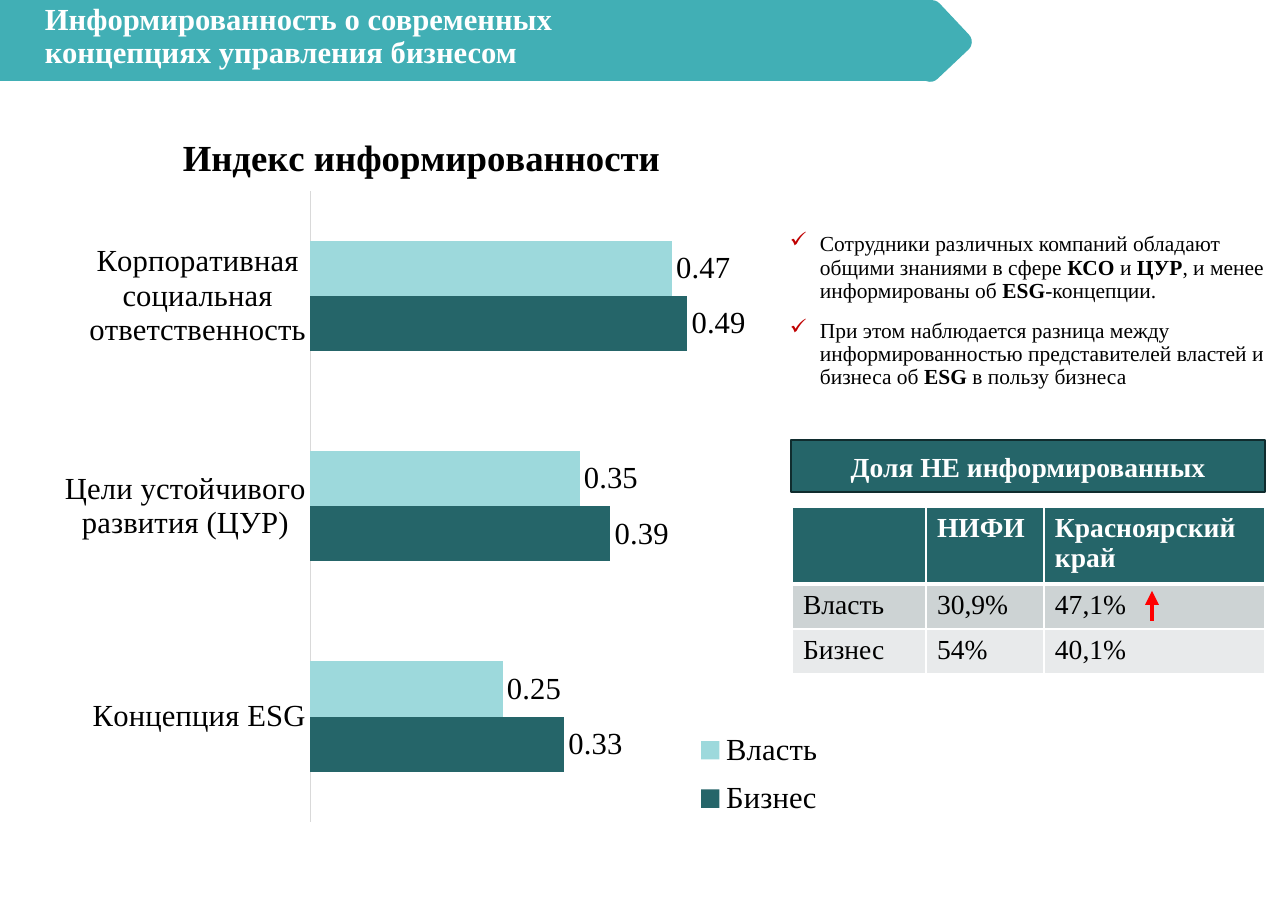
from lxml.etree import SubElement
from pptx import Presentation
from pptx.chart.data import CategoryChartData
from pptx.dml.color import RGBColor
from pptx.enum.chart import XL_CHART_TYPE as ChartType, XL_LABEL_POSITION as LabelPosition
from pptx.enum.chart import XL_LEGEND_POSITION as LegendPosition, XL_TICK_MARK as TickMark
from pptx.enum.shapes import MSO_CONNECTOR as Connector, MSO_SHAPE as Shape
from pptx.enum.text import MSO_ANCHOR as Anchor, PP_ALIGN as Align
from pptx.oxml import parse_xml
from pptx.oxml.ns import nsdecls, qn
from pptx.util import Pt

PX = 8298  # EMU in one px
FONT = "Times New Roman"
COLORS = {"band": "41AFB5", "dark": "256569", "light": "9DD9DC", "edge": "102C2E",
          "row1": "CDD3D4", "row2": "E8EAEB", "axis": "D9D9D9", "check": "C00000",
          "arrow": "FF0000", "white": "FFFFFF", "black": "000000"}


def rgb(name):
    return RGBColor.from_string(COLORS[name])


def write(paragraph, text, size=18, color="black", bold=False, align=None, spacing=None):
    """Text between asterisks turns bold."""
    for index, part in enumerate(text.split("*")):
        run = paragraph.add_run()
        run.text = part
        run.font.name, run.font.size = FONT, Pt(size)
        run.font.bold = bold or index % 2 == 1
        run.font.color.rgb = rgb(color)
    paragraph.alignment = align
    paragraph.line_spacing = spacing


presentation = Presentation()
presentation.slide_width, presentation.slide_height = 1288 * PX, 911 * PX
slide = presentation.slides.add_slide(presentation.slide_layouts[6])
shapes = slide.shapes

# Title band with a pointed end, and the header bar of the table
blocks = [(Shape.RECTANGLE, 0, 0, 931, 81, "band"),
          (Shape.ROUNDED_RECTANGLE, 899, 9, 64, 64, "band"),
          (Shape.RECTANGLE, 791, 440, 474, 52, "dark")]
for kind, left, top, width, height, color in blocks:
    shape = shapes.add_shape(kind, left * PX, top * PX, width * PX, height * PX)
    shape.shadow.inherit = False
    shape.fill.solid()
    shape.fill.fore_color.rgb = rgb(color)
    if kind == Shape.ROUNDED_RECTANGLE:
        shape.rotation = 46.7
    if color == "band":
        shape.line.fill.background()
    else:
        shape.line.color.rgb = rgb("edge")
        shape.line.width = Pt(1)
        shape.text_frame.vertical_anchor = Anchor.MIDDLE
        write(shape.text_frame.paragraphs[0], "Доля НЕ информированных",
              color="white", bold=True, align=Align.CENTER)

# Slide title
title = shapes.add_textbox(34 * PX, 0, 622 * PX, 75 * PX).text_frame
title.word_wrap = True
title.vertical_anchor = Anchor.MIDDLE
write(title.paragraphs[0], "Информированность о современных концепциях управления бизнесом",
      size=20, color="white", bold=True, spacing=0.9)

# Bar chart
data = CategoryChartData(number_format="0.00")
data.categories = ["Концепция ESG", "Цели устойчивого развития (ЦУР)",
                   "Корпоративная социальная ответственность"]
data.add_series("Бизнес", [0.33, 0.39, 0.49])
data.add_series("Власть", [0.25, 0.35, 0.47])
chart = shapes.add_chart(ChartType.BAR_CLUSTERED, 0, 96 * PX, 839 * PX, 789 * PX, data).chart
chart.font.name, chart.font.size = FONT, Pt(20)
chart.font.color.rgb = rgb("black")
chart.has_title = True
write(chart.chart_title.text_frame.paragraphs[0], "Индекс информированности", size=24, bold=True)
chart.chart_title.include_in_layout = False
chart.has_legend = True
chart.legend.position = LegendPosition.BOTTOM
chart.legend.include_in_layout = False

plot = chart.plots[0]
plot.gap_width, plot.overlap = 182, 0
plot.vary_by_categories = False
for series, color in zip(plot.series, ["dark", "light"]):
    series.format.fill.solid()
    series.format.fill.fore_color.rgb = rgb(color)
    labels = series.data_labels
    labels.show_value = True
    labels.position = LabelPosition.OUTSIDE_END
    labels.font.name, labels.font.size = FONT, Pt(20)
    labels.font.color.rgb = rgb("black")

category_axis, value_axis = chart.category_axis, chart.value_axis
category_axis.major_tick_mark = TickMark.NONE
category_axis.format.line.color.rgb = rgb("axis")
category_axis.format.line.width = Pt(0.75)
value_axis.minimum_scale, value_axis.maximum_scale = 0, 0.6
value_axis.has_major_gridlines = False
value_axis.visible = False

# Places of the chart parts, as shares of the chart
plot_area = chart._chartSpace.chart.plotArea
places = [(chart.chart_title._element, {"x": 0.21, "y": 0.04}),
          (plot_area, {"x": 0.37, "y": 0.12, "w": 0.55, "h": 0.8}),
          (chart.legend._element, {"x": 0.83, "y": 0.79, "w": 0.15, "h": 0.14})]
for element, place in places:
    for old_layout in element.findall(qn("c:layout")):
        element.remove(old_layout)
    layout = parse_xml(f"<c:layout {nsdecls('c')}><c:manualLayout/></c:layout>")
    if element is plot_area:
        SubElement(layout[0], qn("c:layoutTarget"), val="inner")
    for side in "xy":
        SubElement(layout[0], qn(f"c:{side}Mode"), val="edge")
    for side, share in place.items():
        SubElement(layout[0], qn(f"c:{side}"), val=str(share))
    element.insert(0 if element is plot_area else 1, layout)

# Findings with check marks
findings = [
    "Сотрудники различных компаний обладают общими знаниями в сфере *КСО* и *ЦУР*, "
    "и менее информированы об *ESG*-концепции.",
    "При этом наблюдается разница между информированностью представителей властей "
    "и бизнеса об *ESG* в пользу бизнеса"]
frame = shapes.add_textbox(779 * PX, 228 * PX, 498 * PX, 185 * PX).text_frame
frame.word_wrap = True
for index, finding in enumerate(findings):
    paragraph = frame.add_paragraph() if index else frame.paragraphs[0]
    write(paragraph, finding, size=14, spacing=0.9)
    if index:
        paragraph.space_before = Pt(11)
    properties = paragraph._p.get_or_add_pPr()
    properties.set("marL", str(30 * PX))
    properties.set("indent", str(-30 * PX))
    bullet_color = SubElement(properties, qn("a:buClr"))
    SubElement(bullet_color, qn("a:srgbClr"), val=COLORS["check"])
    SubElement(properties, qn("a:buChar"), char="✓")

# Table of the uninformed shares
rows = [["", "НИФИ", "Красноярский край"],
        ["Власть", "30,9%", "47,1%"],
        ["Бизнес", "54%", "40,1%"]]
table = shapes.add_table(3, 3, 792 * PX, 507 * PX, 473 * PX, 161 * PX).table
for column, width in zip(table.columns, [134, 118, 221]):
    column.width = width * PX
for row, height in zip(table.rows, [71, 45, 45]):
    row.height = height * PX
for r, texts in enumerate(rows):
    for c, text in enumerate(texts):
        cell = table.cell(r, c)
        header = r == 0
        if text:
            write(cell.text_frame.paragraphs[0], text,
                  color="white" if header else "black", bold=header)
        properties = cell._tc.get_or_add_tcPr()
        for side in "LRTB":
            thick = (header and side == "B") or (r == 1 and side == "T")
            border = SubElement(properties, qn(f"a:ln{side}"), w=str(Pt(3 if thick else 1)))
            fill = SubElement(border, qn("a:solidFill"))
            SubElement(fill, qn("a:srgbClr"), val=COLORS["white"])
        cell.fill.solid()
        cell.fill.fore_color.rgb = rgb(["dark", "row1", "row2"][r])

# Arrow beside the higher share
arrow = shapes.add_connector(Connector.STRAIGHT, 1152 * PX, 621 * PX, 1152 * PX, 591 * PX)
arrow.line.color.rgb = rgb("arrow")
arrow.line.width = Pt(3)
SubElement(arrow.line._get_or_add_ln(), qn("a:tailEnd"), type="triangle")
SubElement(arrow._element.spPr, qn("a:effectLst"))

presentation.save("out.pptx")
